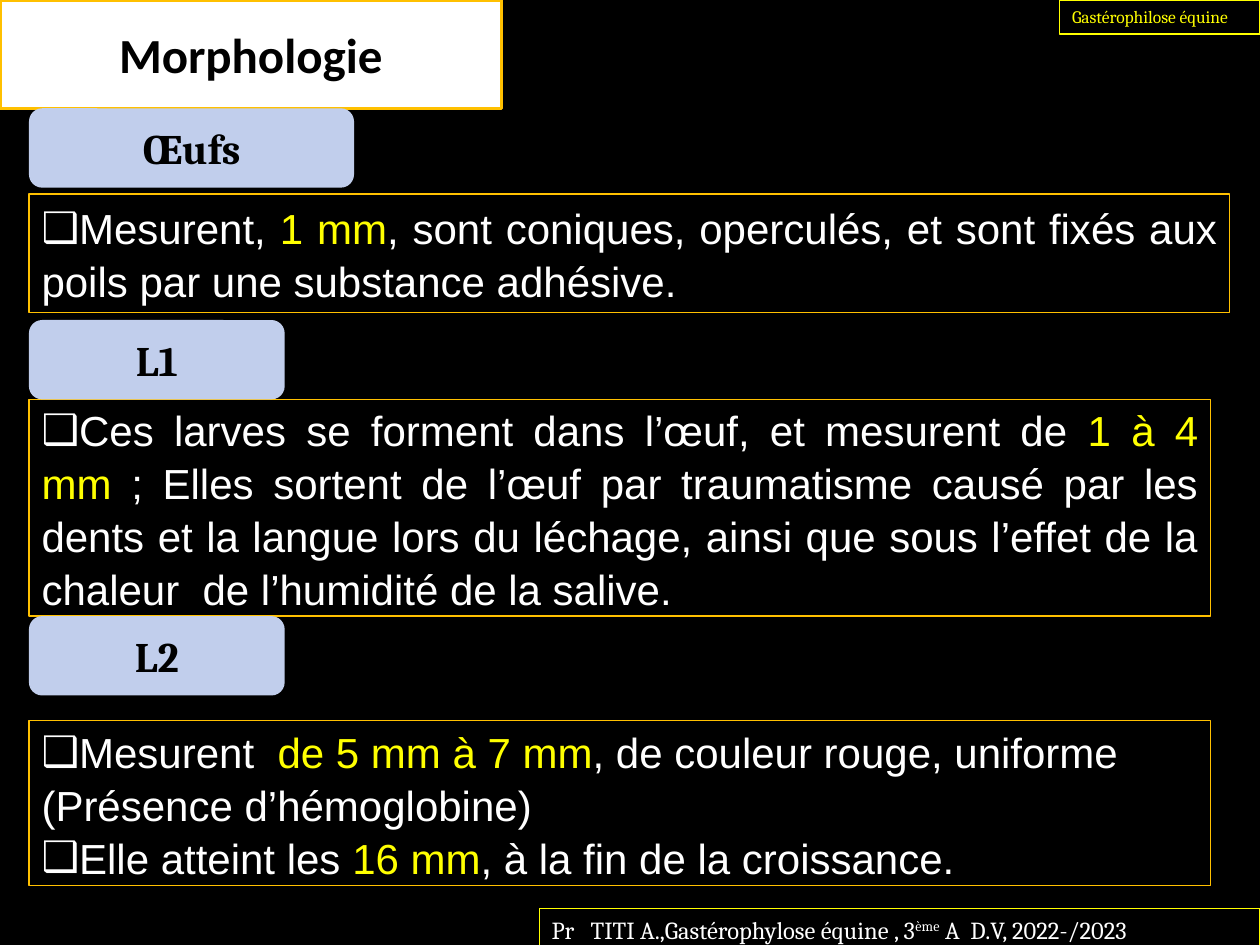
from lxml.etree import SubElement
from pptx import Presentation
from pptx.dml.color import RGBColor
from pptx.enum.shapes import MSO_SHAPE
from pptx.enum.text import MSO_ANCHOR, MSO_AUTO_SIZE, PP_ALIGN
from pptx.oxml.ns import qn
from pptx.util import Inches, Pt

COLORS = {"black": "000000", "white": "FFFFFF", "yellow": "FFFF00", "gold": "FFC000", "blue": "C1CEEC"}
LEFT = 0.23
TITLE = "Morphologie"
STAGES = [
    {
        "name": "Œufs", "label": (0.86, 2.58), "box": (1.54, 9.53, 0.94), "align": PP_ALIGN.JUSTIFY,
        "items": [[("Mesurent, ", "white"), ("1 mm", "yellow"),
                   (", sont coniques, operculés, et sont fixés aux poils par une substance adhésive.", "white")]],
    },
    {
        "name": "L1", "label": (2.54, 2.03), "box": (3.17, 9.38, 1.72), "align": PP_ALIGN.JUSTIFY,
        "items": [[("Ces larves se forment dans l’œuf, et mesurent de ", "white"), ("1 à 4 mm", "yellow"),
                   (" ; Elles sortent de l’œuf par traumatisme causé par les dents et la langue lors du léchage, "
                    "ainsi que sous l’effet de la chaleur  de l’humidité de la salive.", "white")]],
    },
    {
        "name": "L2", "label": (4.89, 2.03), "box": (5.72, 9.38, 1.31), "align": PP_ALIGN.LEFT,
        "items": [[("Mesurent  ", "white"), ("de 5 mm à 7 mm", "yellow"),
                   (", de couleur rouge, uniforme (Présence d’hémoglobine)", "white")],
                  [("Elle atteint les ", "white"), ("16 mm", "yellow"),
                   (", à la fin de la croissance.", "white")]],
    },
]
TOPIC = [("Gastérophilose équine", "yellow")]
CREDIT = [("Pr   TITI A.,Gastérophylose équine , 3", "white"), ("ème", "white"), (" A  D.V, 2022-/2023", "white")]


def color(name):
    return RGBColor.from_string(COLORS[name])


def place(shape, left, top, width, height):
    shape.left, shape.top = Inches(left), Inches(top)
    shape.width, shape.height = Inches(width), Inches(height)


def outline(shape, name, width):
    shape.line.color.rgb = color(name)
    shape.line.width = Pt(width)


def prepare_text(shape, anchor):
    frame = shape.text_frame
    frame.word_wrap = True
    frame.auto_size = MSO_AUTO_SIZE.NONE
    frame.vertical_anchor = anchor
    return frame


def write_runs(paragraph, pieces, font_name, size, align, bold=False):
    paragraph.alignment = align
    for text, color_name in pieces:
        run = paragraph.add_run()
        run.text = text
        run.font.name = font_name
        run.font.size = Pt(size)
        run.font.bold = bold
        run.font.color.rgb = color(color_name)


def add_bullet(paragraph):
    properties = paragraph._p.get_or_add_pPr()
    properties.set("marL", "0")
    properties.set("indent", "0")
    SubElement(properties, qn("a:buFont")).set("typeface", "Wingdings")
    properties[-1].set("typeface", "Arial")
    SubElement(properties, qn("a:buChar")).set("char", "❑")


def add_title(shape):
    place(shape, 0, 0, 3.98, 0.86)
    geometry = SubElement(shape.element.spPr, qn("a:prstGeom"))
    geometry.set("prst", "ellipse")
    SubElement(geometry, qn("a:avLst"))
    shape.fill.solid()
    shape.fill.fore_color.rgb = color("white")
    outline(shape, "gold", 2)
    frame = prepare_text(shape, MSO_ANCHOR.MIDDLE)
    write_runs(frame.paragraphs[0], [(TITLE, "black")], "Calibri", 28, PP_ALIGN.CENTER, True)


def add_label(slide, name, top, width):
    label = slide.shapes.add_shape(MSO_SHAPE.ROUNDED_RECTANGLE, Inches(LEFT), Inches(top), Inches(width), Inches(0.63))
    label.shadow.inherit = False
    label.fill.solid()
    label.fill.fore_color.rgb = color("blue")
    label.line.fill.background()
    frame = prepare_text(label, MSO_ANCHOR.MIDDLE)
    write_runs(frame.paragraphs[0], [(name, "black")], "Cambria", 24, PP_ALIGN.CENTER, True)


def fill_body(shape, stage):
    top, width, height = stage["box"]
    place(shape, LEFT, top, width, height)
    outline(shape, "gold", 0.75)
    frame = prepare_text(shape, MSO_ANCHOR.MIDDLE)
    for index, pieces in enumerate(stage["items"]):
        paragraph = frame.add_paragraph() if index else frame.paragraphs[0]
        paragraph.line_spacing = 1.05
        paragraph.space_before = Pt(0)
        add_bullet(paragraph)
        write_runs(paragraph, pieces, "Arial", 24, stage["align"])


def add_note_box(slide, pieces, size, bounds):
    box = slide.shapes.add_textbox(*[Inches(value) for value in bounds])
    outline(box, "yellow", 0.75)
    frame = prepare_text(box, MSO_ANCHOR.TOP)
    write_runs(frame.paragraphs[0], pieces, "Cambria", size, PP_ALIGN.LEFT)
    return frame.paragraphs[0]


def main():
    presentation = Presentation()
    presentation.slide_width, presentation.slide_height = Inches(10), Inches(7.5)
    slide = presentation.slides.add_slide(presentation.slide_layouts.get_by_name("Comparison"))
    slide.background.fill.solid()
    slide.background.fill.fore_color.rgb = color("black")
    title, *bodies = list(slide.placeholders)
    add_title(title)
    for stage, body in zip(STAGES, bodies):
        add_label(slide, stage["name"], *stage["label"])
        fill_body(body, stage)
    for unused in bodies[len(STAGES):]:
        unused.element.getparent().remove(unused.element)
    add_note_box(slide, TOPIC, 10, (8.41, 0, 1.59, 0.27))
    credit = add_note_box(slide, CREDIT, 14, (4.28, 7.21, 5.72, 0.34))
    credit.runs[1]._r.get_or_add_rPr().set("baseline", "30000")
    presentation.save("out.pptx")


if __name__ == "__main__":
    main()
